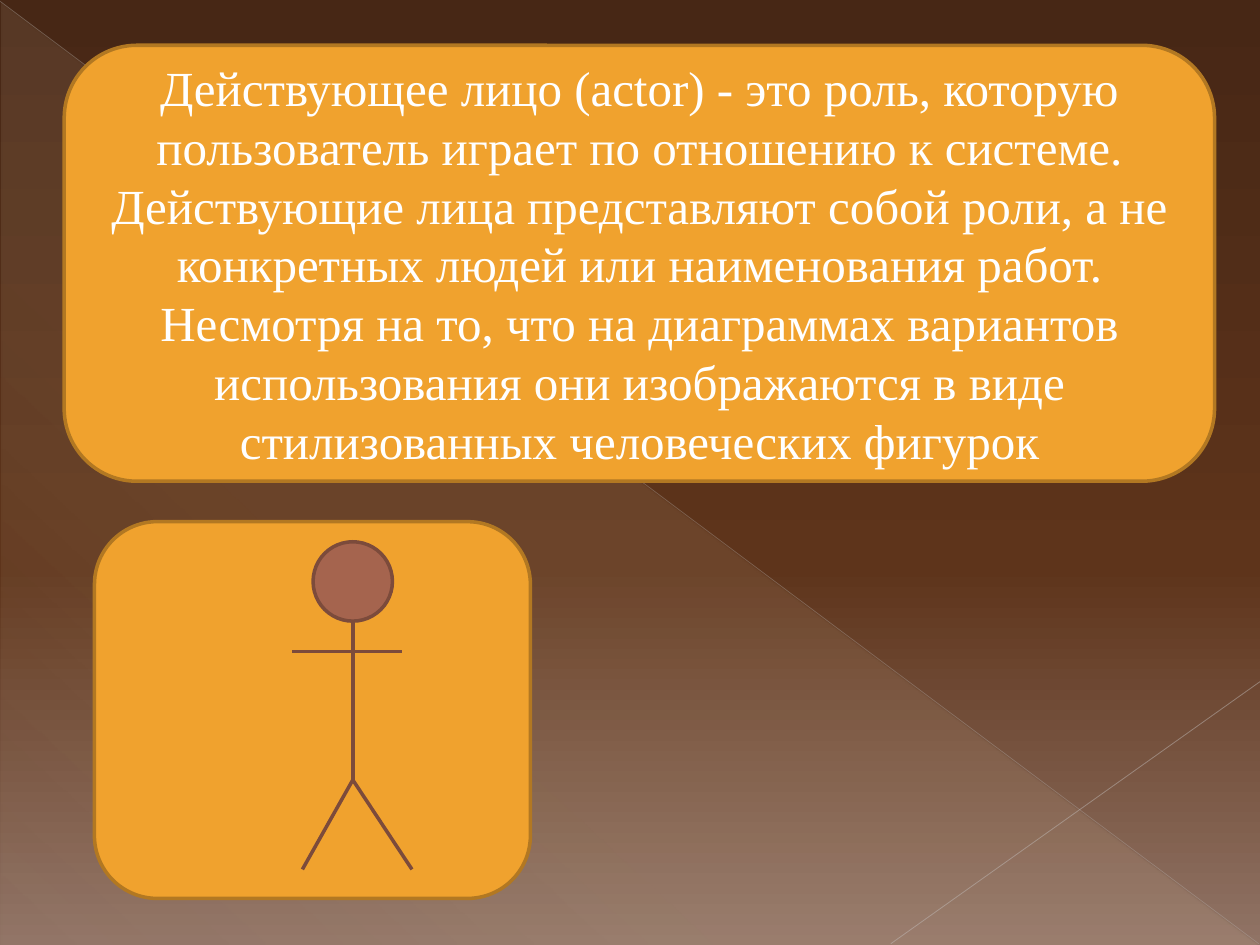
import pptx
import pptx.dml.color
import pptx.enum.shapes
import pptx.enum.text
import pptx.oxml
import pptx.oxml.ns
import pptx.util
from pptx.util import Inches

COLORS = {
    "bg_top": "472715", "bg_mid": "5E341B", "bg_bottom": "907365",
    "glow": "FBEEC9", "long_ray": "BCB7B4", "short_ray": "C4BFBD",
    "panel": "F0A22E", "panel_line": "B27822",
    "actor": "A5644E", "actor_line": "7C4B3B", "text": "FFFFFF",
}
SHAPES = pptx.enum.shapes.MSO_SHAPE
qn = pptx.oxml.ns.qn

ACTOR_TEXT = (
    "Действующее лицо (actor) - это роль, которую пользователь играет "
    "по отношению к системе. Действующие лица представляют собой роли, "
    "а не конкретных людей или наименования работ. Несмотря на то, что "
    "на диаграммах вариантов использования они изображаются в виде "
    "стилизованных человеческих фигурок"
)


def rgb(name):
    return pptx.dml.color.RGBColor.from_string(COLORS[name])


class SlideBuilder:
    """Holds the text style and the current slide."""

    font = "Times New Roman"
    size = pptx.util.Pt(28)

    def __init__(self, slide):
        self.slide = slide

    def set_alpha(self, color, percent):
        alpha = color.makeelement(qn("a:alpha"), {"val": str(percent * 1000)})
        color.append(alpha)

    def gradient(self, fill, element, stops, angle):
        """Apply (position, colour, opacity) stops in percent, angle clockwise."""
        fill.gradient()
        gs_list = element.find(".//" + qn("a:gsLst"))
        for gs in list(gs_list):
            gs_list.remove(gs)
        for pos, name, opacity in stops:
            gs = gs_list.makeelement(qn("a:gs"), {"pos": str(pos * 1000)})
            color = gs.makeelement(qn("a:srgbClr"), {"val": COLORS[name]})
            if opacity < 100:
                self.set_alpha(color, opacity)
            gs.append(color)
            gs_list.append(gs)
        element.find(".//" + qn("a:lin")).set("ang", str(angle * 60000))

    def background(self, stops, angle):
        self.gradient(self.slide.background.fill, self.slide._element, stops, angle)

    def shape(self, kind, box, fill=None, line=None, parent=None):
        shapes = (parent or self.slide).shapes
        sp = shapes.add_shape(kind, *map(Inches, box))
        sp.shadow.inherit = False
        if fill:
            sp.fill.solid()
            sp.fill.fore_color.rgb = rgb(fill)
        if line:
            sp.line.color.rgb = rgb(line)
            sp.line.width = pptx.util.Pt(2)
        else:
            sp.line.fill.background()
        return sp

    def line(self, start, end, color, width=2, opacity=100, parent=None):
        shapes = (parent or self.slide).shapes
        cx = shapes.add_connector(
            pptx.enum.shapes.MSO_CONNECTOR.STRAIGHT, *map(Inches, start + end))
        cx.line.color.rgb = rgb(color)
        cx.line.width = pptx.util.Pt(width)
        sp_pr = cx._element.spPr
        if opacity < 100:
            self.set_alpha(sp_pr.find(".//" + qn("a:srgbClr")), opacity)
        sp_pr.append(sp_pr.makeelement(qn("a:effectLst"), {}))
        return cx

    def panel(self, box, text=None):
        sp = self.shape(SHAPES.ROUNDED_RECTANGLE, box, "panel", "panel_line")
        if text:
            tf = sp.text_frame
            tf.word_wrap = True
            tf.vertical_anchor = pptx.enum.text.MSO_ANCHOR.MIDDLE
            p = tf.paragraphs[0]
            p.text = text
            p.alignment = pptx.enum.text.PP_ALIGN.CENTER
            p.font.name = self.font
            p.font.size = self.size
            p.font.color.rgb = rgb("text")
        return sp

    def stick_figure(self, x, top, head):
        """Draw an actor whose spine is at x."""
        group = self.slide.shapes.add_group_shape()
        self.shape(SHAPES.OVAL, (x - head / 2, top, head, head),
                   "actor", "actor_line", group)
        neck, hip = (x, top + head), (x, 6.19)
        limbs = [
            (neck, hip),                     # body
            (hip, (3.27, 6.9)),              # right leg
            (hip, (2.4, 6.9)),               # left leg
            ((2.32, 5.17), (3.19, 5.17)),    # arms
        ]
        for start, end in limbs:
            self.line(start, end, "actor_line", parent=group)


def main():
    prs = pptx.Presentation()
    prs.slide_width, prs.slide_height = Inches(10), Inches(7.5)
    s = SlideBuilder(prs.slides.add_slide(prs.slide_layouts[6]))

    # Background with a translucent triangle and two rays
    s.background([(0, "bg_top", 100), (60, "bg_mid", 100),
                  (100, "bg_bottom", 100)], 90)
    sp = s.shape(SHAPES.RIGHT_TRIANGLE, (0.01, 0.02, 9.98, 7.48))
    s.gradient(sp.fill, sp._element,
               [(0, "glow", 10), (70, "glow", 8), (100, "glow", 1)], 133)
    s.line((0, 0.01), (9.99, 7.49), "long_ray", 0.39, 35)
    s.line((10, 5.41), (7.07, 7.49), "short_ray", 0.47, 45)

    # Panels: the figure's frame and the definition
    s.panel((0.75, 4.14, 3.46, 2.99))
    s.panel((0.51, 0.36, 9.13, 3.46), ACTOR_TEXT)

    # Actor
    s.stick_figure(2.8, 4.3, 0.63)

    prs.save("out.pptx")


if __name__ == "__main__":
    main()
